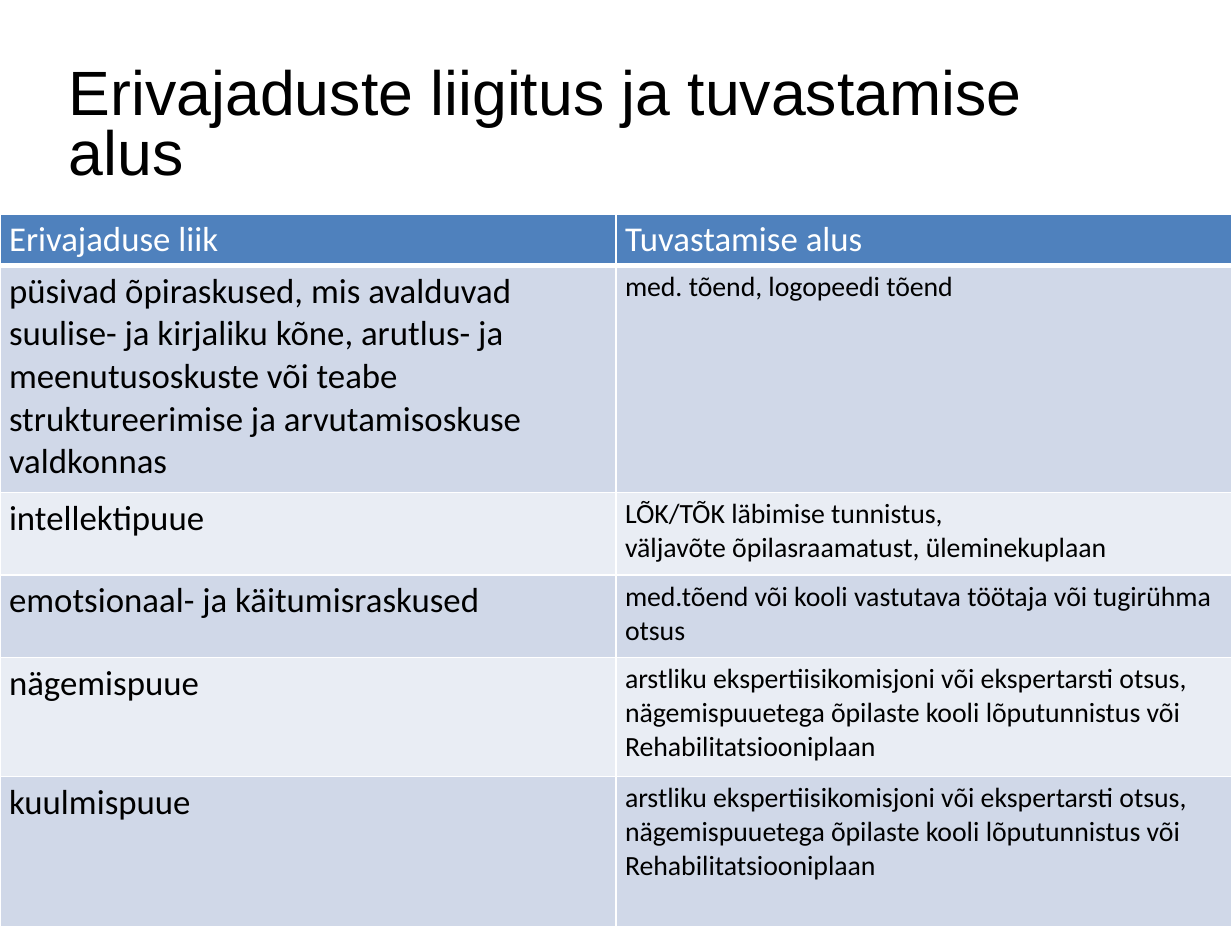
from lxml.etree import SubElement
from pptx import Presentation
from pptx.dml.color import RGBColor
from pptx.enum.text import MSO_ANCHOR, MSO_AUTO_SIZE, PP_ALIGN
from pptx.oxml.ns import qn
from pptx.util import Pt

COLORS = {
    "text": "000000",
    "heading": "FFFFFF",
    "border": "FFFFFF",
    "header": "4F81BD",
    "odd": "D0D8E8",
    "even": "E9EDF4",
}
EXPERT_DECISION = (
    "arstliku ekspertiisikomisjoni või ekspertarsti otsus,\n"
    "nägemispuuetega õpilaste kooli lõputunnistus või\n"
    "Rehabilitatsiooniplaan"
)
NEEDS = [
    (29, "Erivajaduse liik", "Tuvastamise alus"),
    (130.5, "püsivad õpiraskused, mis avalduvad suulise- ja kirjaliku kõne, "
            "arutlus- ja meenutusoskuste või teabe struktureerimise ja "
            "arvutamisoskuse valdkonnas", "med. tõend, logopeedi tõend"),
    (47.5, "intellektipuue",
     "LÕK/TÕK läbimise tunnistus,\nväljavõte õpilasraamatust, üleminekuplaan"),
    (47.5, "emotsionaal- ja käitumisraskused",
     "med.tõend või kooli vastutava töötaja või tugirühma otsus"),
    (68.5, "nägemispuue", EXPERT_DECISION),
    (86.5, "kuulmispuue", EXPERT_DECISION),
]
SLIDE_WIDTH, SLIDE_HEIGHT = 708.5, 538.5


def style_font(font, name, size, color):
    font.name = name
    font.size = Pt(size)
    font.bold = False
    font.color.rgb = RGBColor.from_string(COLORS[color])


def add_border(cell, side, width):
    line = SubElement(cell._tc.get_or_add_tcPr(), qn(f"a:{side}"), w=str(Pt(width)))
    fill = SubElement(line, qn("a:solidFill"))
    SubElement(fill, qn("a:srgbClr"), val=COLORS["border"])


prs = Presentation()
prs.slide_width, prs.slide_height = Pt(SLIDE_WIDTH), Pt(SLIDE_HEIGHT)
slide = prs.slides.add_slide(prs.slide_layouts[5])

title = slide.shapes.title
title.left, title.top, title.width, title.height = Pt(39.6), Pt(23.8), Pt(592.5), Pt(99.4)
heading = title.text_frame
heading.text = "Erivajaduste liigitus ja tuvastamise alus"
heading.word_wrap = True
heading.auto_size = MSO_AUTO_SIZE.NONE
heading.vertical_anchor = MSO_ANCHOR.MIDDLE
heading.margin_left = heading.margin_right = heading.margin_top = heading.margin_bottom = 0
heading.paragraphs[0].alignment = PP_ALIGN.LEFT
heading.paragraphs[0].line_spacing = 0.8
style_font(heading.paragraphs[0].font, "Arial", 36, "text")

table_height = sum(height for height, *_ in NEEDS)
needs_table = slide.shapes.add_table(
    len(NEEDS), 2, 0, Pt(123.2), Pt(SLIDE_WIDTH), Pt(table_height)
).table
for column in needs_table.columns:
    column.width = Pt(SLIDE_WIDTH / 2)

for row, (height, *texts) in enumerate(NEEDS):
    needs_table.rows[row].height = Pt(height)
    band = "header" if row == 0 else "odd" if row % 2 else "even"
    for col, text in enumerate(texts):
        cell = needs_table.cell(row, col)
        cell.text = text
        cell.margin_left = cell.margin_right = Pt(5.2)
        cell.margin_top = cell.margin_bottom = Pt(2.6)
        for side in ("lnL", "lnR", "lnT", "lnB"):
            add_border(cell, side, 3 if row == 0 and side == "lnB" else 1)
        cell.fill.solid()
        cell.fill.fore_color.rgb = RGBColor.from_string(COLORS[band])
        size = 16 if row and col else 20
        for paragraph in cell.text_frame.paragraphs:
            style_font(paragraph.font, "Calibri", size, "text" if row else "heading")

prs.save("out.pptx")
